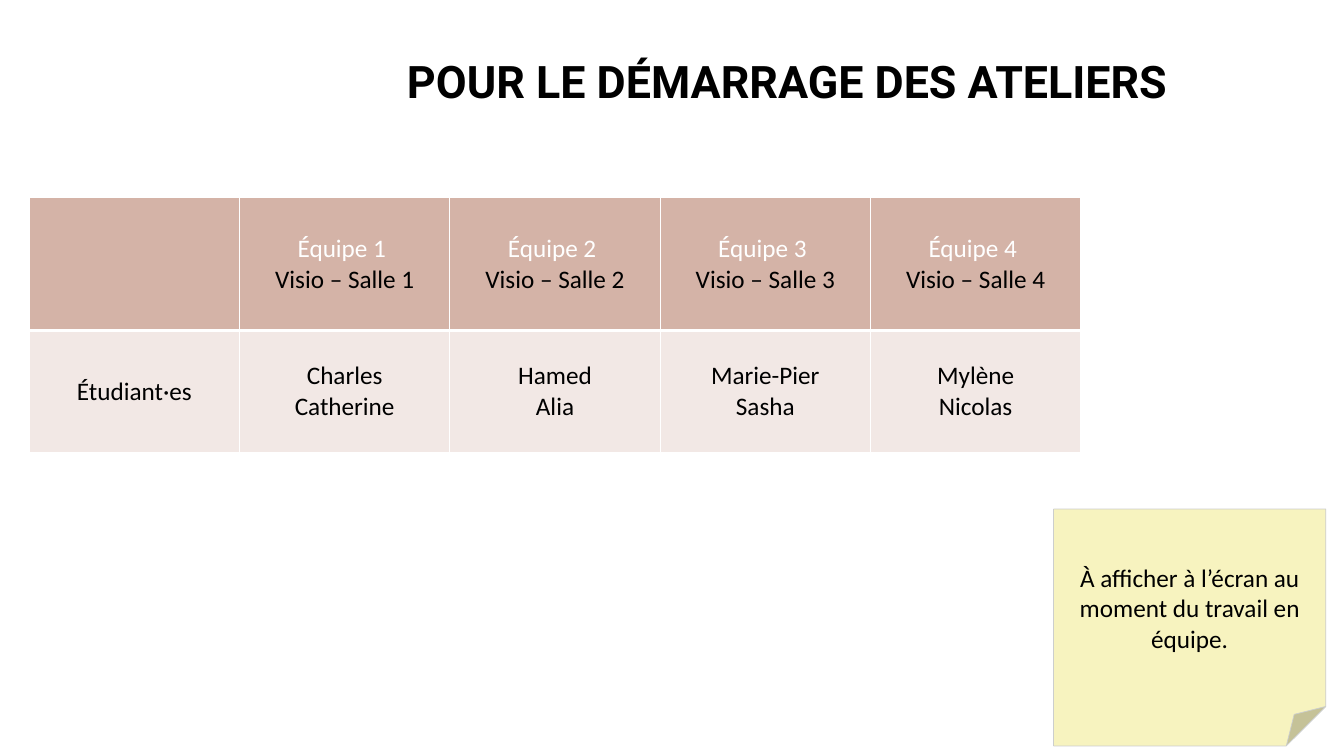
import pptx
import pptx.util
import pptx.dml.color
import pptx.enum.shapes
import pptx.enum.text
import pptx.oxml
import pptx.oxml.ns

# Content
TITLE = "POUR LE DÉMARRAGE DES ATELIERS"
LABEL = "Étudiant·es"
TEAMS = [
    ("Charles", "Catherine"),
    ("Hamed", "Alia"),
    ("Marie-Pier", "Sasha"),
    ("Mylène", "Nicolas"),
]
NOTE = "À afficher à l’écran au moment du travail en équipe."
HEX = {
    "ink": "000000", "white": "FFFFFF", "head": "D4B3A7",
    "body": "F2E8E5", "note": "F7F3BF", "edge": "CCCECD",
}

# Layout in inches
WIDE, HIGH = 13.33, 7.5
TITLE_BOX = (3.46, 0.48, 8.7, 0.87)
GRID_AT = (0.29, 1.96)
COL = 10.43 / (len(TEAMS) + 1)
ROWS = (1.32, 1.21)
NOTE_BOX = (10.45, 5.05, 2.7, 2.35)

ANCHOR = pptx.enum.text.MSO_ANCHOR
inch = pptx.util.Inches


def rgb(name):
    return pptx.dml.color.RGBColor.from_string(HEX[name])


def style(para, size, face, color="ink", bold=False):
    para.alignment = pptx.enum.text.PP_ALIGN.CENTER
    font = para.font
    font.size, font.name, font.bold = pptx.util.Pt(size), face, bold
    font.color.rgb = rgb(color)


def border(cell, base):
    props = cell._tc.get_or_add_tcPr()
    space = pptx.oxml.ns.nsdecls("a")
    sides = (("lnL", 1), ("lnR", 1), ("lnT", 1), ("lnB", base))
    for spot, (side, width) in enumerate(sides):
        line = pptx.oxml.parse_xml(
            f'<a:{side} {space} w="{pptx.util.Pt(width)}"><a:solidFill>'
            f'<a:srgbClr val="{HEX["white"]}"/></a:solidFill></a:{side}>')
        props.insert(spot, line)


def paint(cell, lines, fill, first, base):
    cell.fill.solid()
    cell.fill.fore_color.rgb = rgb(fill)
    cell.vertical_anchor = ANCHOR.MIDDLE
    cell.text = "\n".join(lines)
    for num, para in enumerate(cell.text_frame.paragraphs):
        style(para, 18, "Calibri", "ink" if num else first)
    border(cell, base)


deck = pptx.Presentation()
deck.slide_width, deck.slide_height = inch(WIDE), inch(HIGH)
slide = deck.slides.add_slide(deck.slide_layouts[5])

# Title
title = slide.shapes.title
title.left, title.top, title.width, title.height = map(inch, TITLE_BOX)
title.text_frame.text = TITLE
title.text_frame.vertical_anchor = ANCHOR.TOP
style(title.text_frame.paragraphs[0], 32, "Roboto", bold=True)

# Team table
heads = [()] + [(f"Équipe {n} ", f"Visio – Salle {n}")
                for n in range(1, len(TEAMS) + 1)]
grid = [(heads, "head", "white", 3), ([(LABEL,)] + TEAMS, "body", "ink", 1)]
table = slide.shapes.add_table(
    len(grid), len(heads), *map(inch, GRID_AT),
    inch(COL * len(heads)), inch(sum(ROWS))).table
for col in table.columns:
    col.width = inch(COL)
for row, (cells, fill, first, base) in enumerate(grid):
    table.rows[row].height = inch(ROWS[row])
    for col, lines in enumerate(cells):
        paint(table.cell(row, col), lines, fill, first, base)

# Sticky note
note = slide.shapes.add_shape(
    pptx.enum.shapes.MSO_SHAPE.FOLDED_CORNER, *map(inch, NOTE_BOX))
note.shadow.inherit = False
note.fill.solid()
note.fill.fore_color.rgb = rgb("note")
note.line.color.rgb = rgb("edge")
note.line.width = pptx.util.Pt(0.5)
note.text_frame.text = NOTE
note.text_frame.word_wrap = True
note.text_frame.vertical_anchor = ANCHOR.MIDDLE
style(note.text_frame.paragraphs[0], 18, "Calibri")

deck.save("out.pptx")
